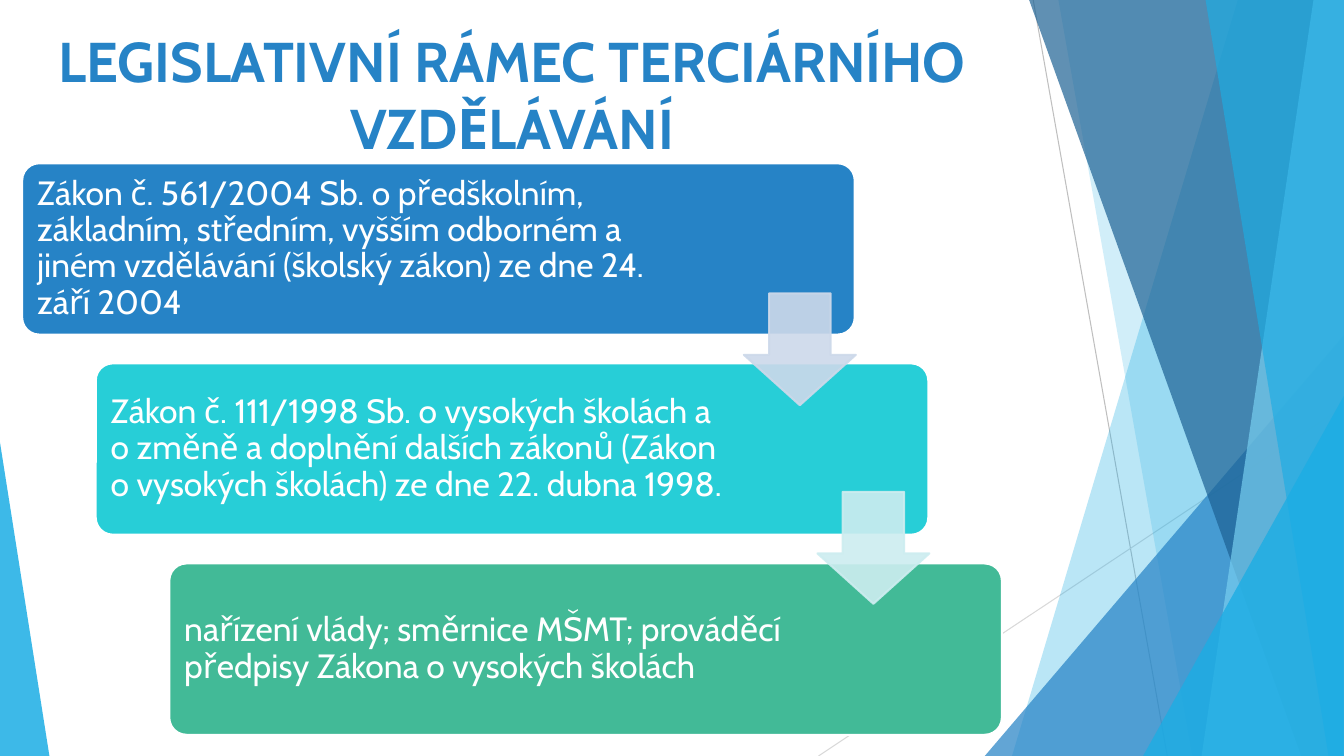
from dataclasses import dataclass
from typing import Any

from lxml import etree
from pptx import Presentation
from pptx.dml import color as dml
from pptx.enum import shapes, text
from pptx.oxml import ns
from pptx import util as u

COLS, ROWS = 133.33, 75
CELL = u.Inches(0.1)
FONT = "Cabin"
HUES = {
    "sky": "1CADE4", "blue": "2683C6", "navy": "1D6294", "pale": "77CEEF",
    "aqua": "27CED7", "green": "42BA97", "mist": "CDD9EA", "foam": "CDEDF0",
    "grey": "BFBFBF", "light": "D9D9D9", "white": "FFFFFF",
}
KINDS = shapes.MSO_SHAPE


@dataclass
class Ray:
    start: tuple[float, float]
    end: tuple[float, float]
    hue: str


@dataclass
class Shard:
    points: list[tuple[float, float]]
    hue: str
    alpha: int


@dataclass
class Wedge:
    left: float
    top: float
    width: float
    tip: float
    hue: str
    alpha: int


@dataclass
class Step:
    hue: str
    words: str


@dataclass
class Arrow:
    hue: str


RAYS = [
    Ray((102.5, 0), (115.8, ROWS), "grey"),
    Ray((COLS, 40.3), (81.2, ROWS), "light"),
]


def shard(top: float, foot: float, hue: str, alpha: int) -> Shard:
    return Shard([(top, 0), (COLS, 0), (COLS, ROWS), (foot, ROWS)], hue, alpha)


DECOR = [
    shard(122.8, 100.4, "sky", 30),
    shard(105, 118.3, "sky", 20),
    Wedge(97.7, 33.3, 35.6, 1, "blue", 72),
    shard(102.1, 129.1, "navy", 70),
    shard(130.3, 119.2, "pale", 70),
    shard(119.6, 131.8, "sky", 65),
    Wedge(113.4, 39.3, 19.9, 1, "sky", 80),
    Wedge(0, 43.9, 4.9, 0, "sky", 85),
]
STEPS = [
    Step("blue", "Zákon č. 561/2004 Sb. o předškolním, základním, středním, vyšším "
         "odborném a jiném vzdělávání (školský zákon) ze dne 24. září 2004"),
    Step("aqua", "Zákon č. 111/1998 Sb. o vysokých školách a o změně a doplnění dalších "
         "zákonů (Zákon o vysokých školách) ze dne 22. dubna 1998."),
    Step("green", "nařízení vlády; směrnice MŠMT; prováděcí předpisy Zákona o vysokých školách"),
]
ARROWS = [Arrow("mist"), Arrow("foam")]


def cells(*spans: float) -> list[int]:
    return [round(span * CELL) for span in spans]


def apply(target: Any, values: dict[str, Any]) -> None:
    for name, value in values.items():
        setattr(target, name, value)


def tint(hue: str) -> dml.RGBColor:
    return dml.RGBColor.from_string(HUES[hue])


def fade(fill: Any, node: Any, hue: str, alpha: int) -> None:
    fill.solid()
    fill.fore_color.rgb = tint(hue)
    if alpha < 100:
        tone = node.find(ns.qn("a:solidFill")).find(ns.qn("a:srgbClr"))
        etree.SubElement(tone, ns.qn("a:alpha")).set("val", str(alpha * 1000))


def paint(shape: Any, hue: str, alpha: int = 100, edge: str = "") -> None:
    shape.shadow.inherit = False
    props = shape.element.spPr
    fade(shape.fill, props, hue, alpha)
    if edge:
        fade(shape.line.fill, props.find(ns.qn("a:ln")), edge, alpha)
        shape.line.width = u.Pt(1.5)
    else:
        shape.line.fill.background()


def write(shape: Any, words: str, frame: dict, para: dict, font: dict) -> None:
    apply(shape.text_frame, {"word_wrap": True, **frame})
    line = shape.text_frame.paragraphs[0]
    apply(line, para)
    run = line.add_run()
    run.text = words
    hue = font.pop("hue")
    apply(run.font, {"name": FONT, **font})
    run.font.color.rgb = tint(hue)


def draw_ray(tree: Any, ray: Ray) -> None:
    line = tree.add_connector(shapes.MSO_CONNECTOR.STRAIGHT, *cells(*ray.start, *ray.end))
    line.line.color.rgb = tint(ray.hue)
    line.line.width = u.Pt(0.75)
    etree.SubElement(line.element.spPr, ns.qn("a:effectLst"))


def draw_decor(tree: Any, item: Shard | Wedge) -> None:
    if isinstance(item, Shard):
        first, *rest = [tuple(cells(*point)) for point in item.points]
        pen = tree.build_freeform(*first)
        pen.add_line_segments(rest, close=True)
        shape = pen.convert_to_shape()
    else:
        box = cells(item.left, item.top, item.width, ROWS - item.top)
        shape = tree.add_shape(KINDS.ISOSCELES_TRIANGLE, *box)
        shape.adjustments[0] = item.tip
    paint(shape, item.hue, item.alpha)


def draw_title(tree: Any) -> None:
    box = tree.add_textbox(*cells(0, 2.1, 101.6, 10))
    write(box, "LEGISLATIVNÍ RÁMEC TERCIÁRNÍHO VZDĚLÁVÁNÍ",
          {"vertical_anchor": text.MSO_ANCHOR.TOP},
          {"alignment": text.PP_ALIGN.CENTER},
          {"size": u.Pt(40), "bold": True, "hue": "blue"})


def draw_step(tree: Any, rank: int, step: Step) -> None:
    box = cells(2.2 + 7.3 * rank, 16.2 + 19.85 * rank, 82.6, 17)
    shape = tree.add_shape(KINDS.ROUNDED_RECTANGLE, *box)
    shape.adjustments[0] = 0.1
    paint(shape, step.hue, edge="white")
    inset, gap = cells(1, 19.2)
    write(shape, step.words,
          {"vertical_anchor": text.MSO_ANCHOR.MIDDLE, "margin_left": inset,
           "margin_top": inset, "margin_right": gap, "margin_bottom": inset},
          {"alignment": text.PP_ALIGN.LEFT, "line_spacing": 0.9},
          {"size": u.Pt(24), "hue": "white"})


def draw_arrow(tree: Any, rank: int, arrow: Arrow) -> None:
    box = cells(73.8 + 7.3 * rank, 29.1 + 19.7 * rank, 11.1, 11.1)
    shape = tree.add_shape(KINDS.DOWN_ARROW, *box)
    shape.adjustments[0] = 0.45
    shape.adjustments[1] = 0.55
    shape.adjustments[0], shape.adjustments[1] = 0.55, 0.45
    paint(shape, arrow.hue, 90, arrow.hue)


def main() -> None:
    deck = Presentation()
    deck.slide_width, deck.slide_height = cells(COLS, ROWS)
    tree = deck.slides.add_slide(deck.slide_layouts[6]).shapes
    for ray in RAYS:
        draw_ray(tree, ray)
    for item in DECOR:
        draw_decor(tree, item)
    draw_title(tree)
    for rank, step in enumerate(STEPS):
        draw_step(tree, rank, step)
    for rank, arrow in enumerate(ARROWS):
        draw_arrow(tree, rank, arrow)
    deck.save("out.pptx")


if __name__ == "__main__":
    main()
